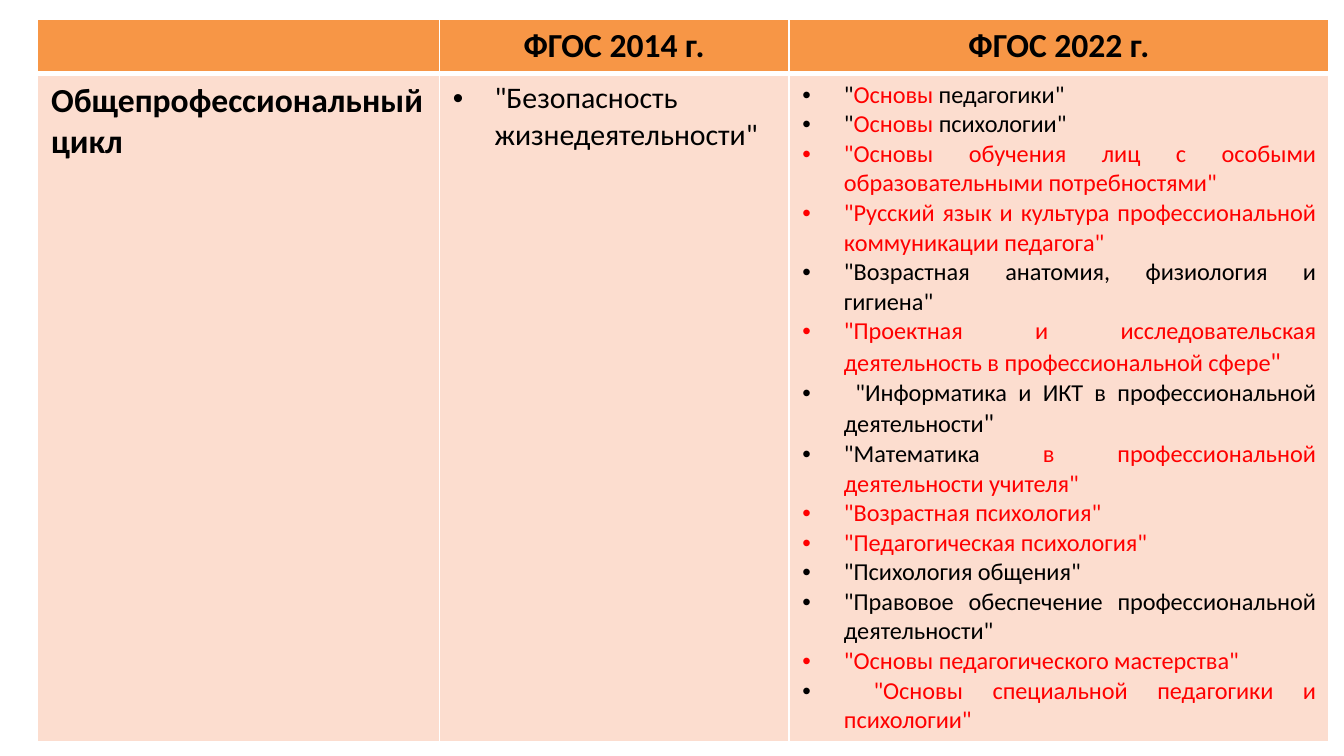
from dataclasses import dataclass
from typing import NamedTuple

import pptx
import pptx.dml.color
import pptx.enum.text
import pptx.oxml
import pptx.oxml.ns
import pptx.util
from pptx.util import Inches

ALIGN = pptx.enum.text.PP_ALIGN


@dataclass(frozen=True)
class Theme:
    font: str = "Calibri"
    black: str = "000000"
    red: str = "FF0000"
    border: str = "FFFFFF"
    header_fill: str = "F79646"
    body_fill: str = "FCDDCF"
    heading_size: float = 18
    subject_size: float = 16
    list_size: float = 13
    quote_size: float = 14


THEME = Theme()


class Segment(NamedTuple):
    text: str
    color: str = THEME.black
    size: float = THEME.list_size
    bold: bool = False


class Line(NamedTuple):
    segments: list[Segment]
    alignment: ALIGN = ALIGN.JUSTIFY
    bulleted: bool = True


def heading(text: str, alignment: ALIGN = ALIGN.CENTER) -> list[Line]:
    segment = Segment(text, size=THEME.heading_size, bold=True)
    return [Line([segment], alignment, bulleted=False)]


def kept(text: str) -> Segment:
    """Wording common to both standards."""
    return Segment(text)


def new(text: str) -> Segment:
    """Wording introduced by the 2022 standard."""
    return Segment(text, THEME.red)


SUBJECTS_2014 = [
    Line([Segment('"Безопасность жизнедеятельности"', size=THEME.subject_size)], ALIGN.LEFT)
]
SUBJECTS_2022 = [Line(segments) for segments in (
    [kept('"'), new("Основы "), kept('педагогики"')],
    [kept('"'), new("Основы"), kept(' психологии"')],
    [new('"Основы обучения лиц с особыми образовательными потребностями"')],
    [new('"Русский язык и культура профессиональной коммуникации педагога"')],
    [kept('"Возрастная анатомия, физиология и гигиена"')],
    [new('"Проектная и исследовательская деятельность в профессиональной сфере'),
     Segment('"', THEME.red, THEME.quote_size)],
    [kept(' "Информатика и ИКТ в профессиональной деятельности'),
     Segment('"', size=THEME.quote_size)],
    [kept('"Математика '), new('в профессиональной деятельности учителя"')],
    [new('"Возрастная психология"')],
    [new('"Педагогическая психология"')],
    [kept('"Психология общения"')],
    [kept('"Правовое обеспечение профессиональной деятельности"')],
    [new('"Основы педагогического мастерства"')],
    [kept(" "), new('"Основы специальной педагогики и психологии"')],
)]

ROWS = [
    [[], heading("ФГОС 2014 г."), heading("ФГОС 2022 г.")],
    [heading("Общепрофессиональный цикл", ALIGN.LEFT), SUBJECTS_2014, SUBJECTS_2022],
]
COLUMN_WIDTHS = [2.99, 2.6, 4.02]
ROW_HEIGHTS = [0.39, 4.91]


def add_bullet(paragraph) -> None:
    properties = paragraph._p.get_or_add_pPr()
    indent = Inches(0.31)
    properties.set("marL", str(indent))
    properties.set("indent", str(-indent))
    namespace = pptx.oxml.ns.nsdecls("a")
    for element in ('buFont %s typeface="Arial"', 'buChar %s char="•"'):
        properties.append(pptx.oxml.parse_xml(f"<a:{element % namespace}/>"))


def write_line(paragraph, line: Line) -> None:
    paragraph.alignment = line.alignment
    if line.bulleted:
        add_bullet(paragraph)
    for segment in line.segments:
        run = paragraph.add_run()
        run.text = segment.text
        run.font.name = THEME.font
        run.font.size = pptx.util.Pt(segment.size)
        run.font.bold = segment.bold
        run.font.color.rgb = pptx.dml.color.RGBColor.from_string(segment.color)


def set_borders(cell, top: float, bottom: float) -> None:
    properties = cell._tc.get_or_add_tcPr()
    widths = {"lnL": 1, "lnR": 1, "lnT": top, "lnB": bottom}
    for position, (edge, width) in enumerate(widths.items()):
        properties.insert(position, pptx.oxml.parse_xml(
            f'<a:{edge} {pptx.oxml.ns.nsdecls("a")} w="{pptx.util.Pt(width)}">'
            f'<a:solidFill><a:srgbClr val="{THEME.border}"/></a:solidFill></a:{edge}>'))


def fill_cell(cell, lines: list[Line], is_header: bool) -> None:
    set_borders(cell, top=1 if is_header else 3, bottom=3 if is_header else 1)
    cell.fill.solid()
    color = THEME.header_fill if is_header else THEME.body_fill
    cell.fill.fore_color.rgb = pptx.dml.color.RGBColor.from_string(color)
    text_frame = cell.text_frame
    for index, line in enumerate(lines):
        paragraph = text_frame.add_paragraph() if index else text_frame.paragraphs[0]
        write_line(paragraph, line)


def add_comparison_table(slide) -> None:
    table = slide.shapes.add_table(
        len(ROWS), len(COLUMN_WIDTHS), Inches(0.28), Inches(0.14),
        Inches(sum(COLUMN_WIDTHS)), Inches(sum(ROW_HEIGHTS))).table
    for column, width in zip(table.columns, COLUMN_WIDTHS):
        column.width = Inches(width)
    for row_index, (row, height) in enumerate(zip(table.rows, ROW_HEIGHTS)):
        row.height = Inches(height)
        for cell, lines in zip(row.cells, ROWS[row_index]):
            fill_cell(cell, lines, is_header=row_index == 0)


def main() -> None:
    presentation = pptx.Presentation()
    presentation.slide_width = Inches(10)
    presentation.slide_height = Inches(10 * 9 / 16)
    slide = presentation.slides.add_slide(presentation.slide_layouts[6])
    add_comparison_table(slide)
    presentation.save("out.pptx")


if __name__ == "__main__":
    main()
